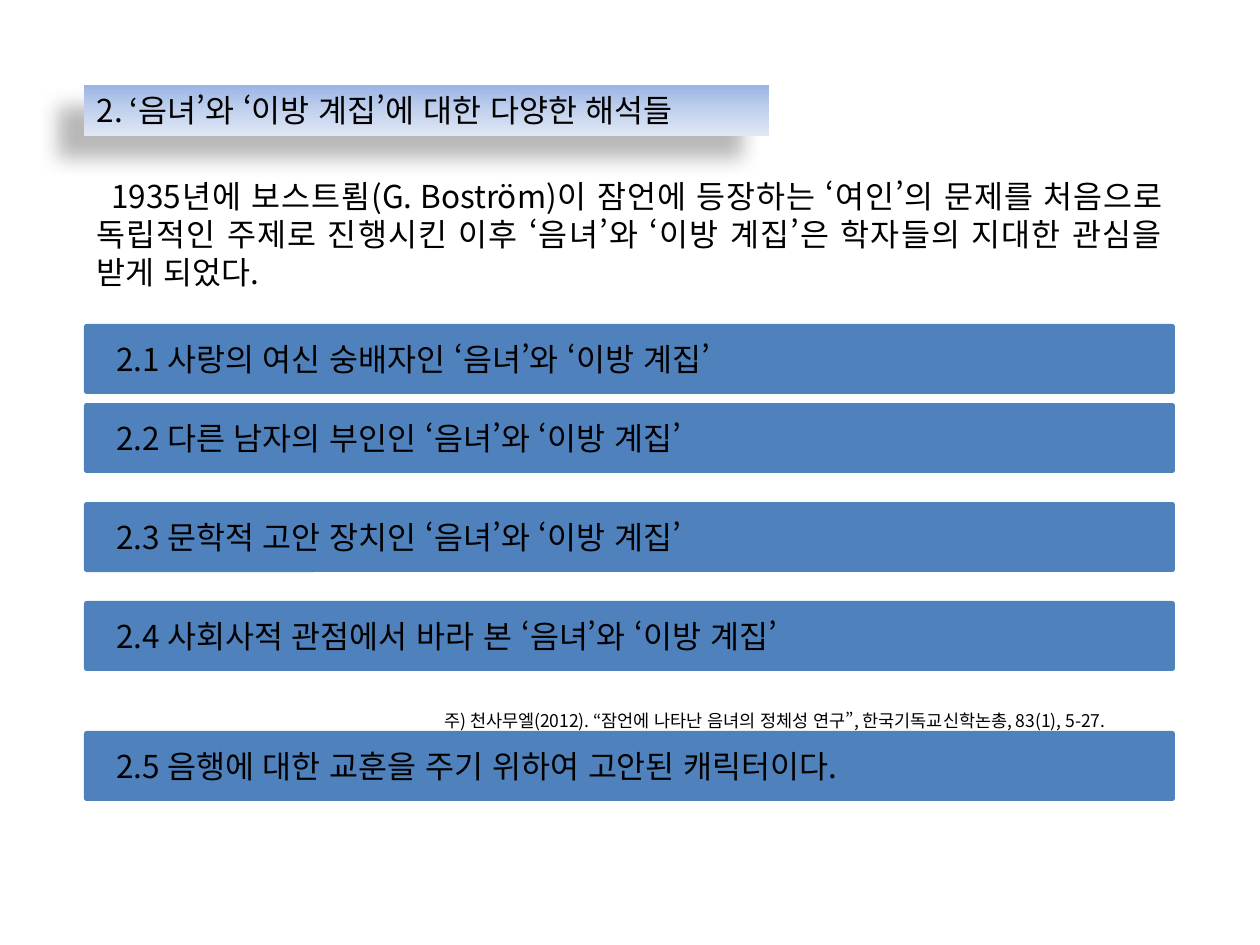
from lxml.etree import SubElement
from pptx import Presentation
from pptx.dml.color import RGBColor
from pptx.enum.lang import MSO_LANGUAGE_ID
from pptx.enum.shapes import MSO_SHAPE
from pptx.enum.text import MSO_ANCHOR, MSO_AUTO_SIZE, PP_ALIGN
from pptx.oxml.ns import qn
from pptx.util import Emu, Pt

COLORS = {
    "text": "000000",
    "banner": "4F81BD",
    "shadow": "000000",
    "heading_top": "9AB5E4",
    "heading_middle": "C2D1ED",
    "heading_bottom": "E1E8F5",
}
FONT = "Noto Sans CJK KR"
PIXELS_PER_INCH = 126
BANNER_LEFT, BANNER_WIDTH, BANNER_HEIGHT = 84, 1091, 70
BANNERS = [
    (324, "2.1 사랑의 여신 숭배자인 ‘음녀’와 ‘이방 계집’"),
    (403, "2.2 다른 남자의 부인인 ‘음녀’와 ‘이방 계집’"),
    (502, "2.3 문학적 고안 장치인 ‘음녀’와 ‘이방 계집’"),
    (601, "2.4 사회사적 관점에서 바라 본 ‘음녀’와 ‘이방 계집’"),
    (731, "2.5 음행에 대한 교훈을 주기 위하여 고안된 캐릭터이다."),
]


def px(length):
    return Emu(round(length * 914400 / PIXELS_PER_INCH))


def write_text(frame, text, size=18, align=PP_ALIGN.LEFT, first_indent=0):
    frame.word_wrap = True
    frame.auto_size = MSO_AUTO_SIZE.NONE
    frame.vertical_anchor = MSO_ANCHOR.TOP
    paragraph = frame.paragraphs[0]
    paragraph.alignment = align
    if first_indent:
        paragraph._p.get_or_add_pPr().set("indent", str(px(first_indent)))
    run = paragraph.add_run()
    run.text = text
    run.font.size = Pt(size)
    run.font.language_id = MSO_LANGUAGE_ID.KOREAN
    run.font.color.rgb = RGBColor.from_string(COLORS["text"])
    run.font.name = FONT
    SubElement(run._r.get_or_add_rPr(), qn("a:ea"), typeface=FONT)


class SlideBuilder:
    def __init__(self, presentation):
        self.slide = presentation.slides.add_slide(presentation.slide_layouts[5])

    def heading(self, left, top, width, height, text):
        shape = self.slide.shapes.title
        shape.left, shape.top = px(left), px(top)
        shape.width, shape.height = px(width), px(height)
        properties = shape._element.spPr
        gradient = SubElement(properties, qn("a:gradFill"), rotWithShape="1")
        stops = SubElement(gradient, qn("a:gsLst"))
        for position, name in ((0, "top"), (50, "middle"), (100, "bottom")):
            stop = SubElement(stops, qn("a:gs"), pos=str(position * 1000))
            SubElement(stop, qn("a:srgbClr"), val=COLORS[f"heading_{name}"])
        SubElement(gradient, qn("a:lin"), ang=str(90 * 60000), scaled="0")
        effects = SubElement(properties, qn("a:effectLst"))
        shadow = SubElement(
            effects, qn("a:outerShdw"), blurRad=str(Pt(11.8)), dist=str(Pt(19.7)),
            dir=str(141 * 60000), algn="tl", rotWithShape="0",
        )
        color = SubElement(shadow, qn("a:srgbClr"), val=COLORS["shadow"])
        SubElement(color, qn("a:alpha"), val="28000")
        write_text(shape.text_frame, text)

    def text(self, left, top, width, height, text, **style):
        box = self.slide.shapes.add_textbox(px(left), px(top), px(width), px(height))
        write_text(box.text_frame, text, **style)

    def banner(self, top, text):
        shape = self.slide.shapes.add_shape(
            MSO_SHAPE.ROUNDED_RECTANGLE,
            px(BANNER_LEFT), px(top), px(BANNER_WIDTH), px(BANNER_HEIGHT),
        )
        shape.adjustments[0] = 0.04
        shape.shadow.inherit = False
        shape.fill.solid()
        shape.fill.fore_color.rgb = RGBColor.from_string(COLORS["banner"])
        shape.line.fill.background()
        self.text(BANNER_LEFT + 20, top + 10, 1022, 51, text)


def main():
    presentation = Presentation()
    presentation.slide_width, presentation.slide_height = px(1260), px(945)
    builder = SlideBuilder(presentation)
    builder.heading(84, 85, 685, 51, "2. ‘음녀’와 ‘이방 계집’에 대한 다양한 해석들")
    builder.text(
        84, 171, 1091, 127,
        "1935년에 보스트룀(G. Boström)이 잠언에 등장하는 ‘여인’의 문제를 처음으로 "
        "독립적인 주제로 진행시킨 이후 ‘음녀’와 ‘이방 계집’은 학자들의 지대한 관심을 받게 되었다.",
        align=PP_ALIGN.JUSTIFY, first_indent=15,
    )
    builder.text(
        432, 704, 753, 34,
        "주) 천사무엘(2012). “잠언에 나타난 음녀의 정체성 연구”, 한국기독교신학논총, 83(1), 5-27.",
        size=10,
    )
    for top, text in BANNERS:
        builder.banner(top, text)
    presentation.save("out.pptx")


if __name__ == "__main__":
    main()
